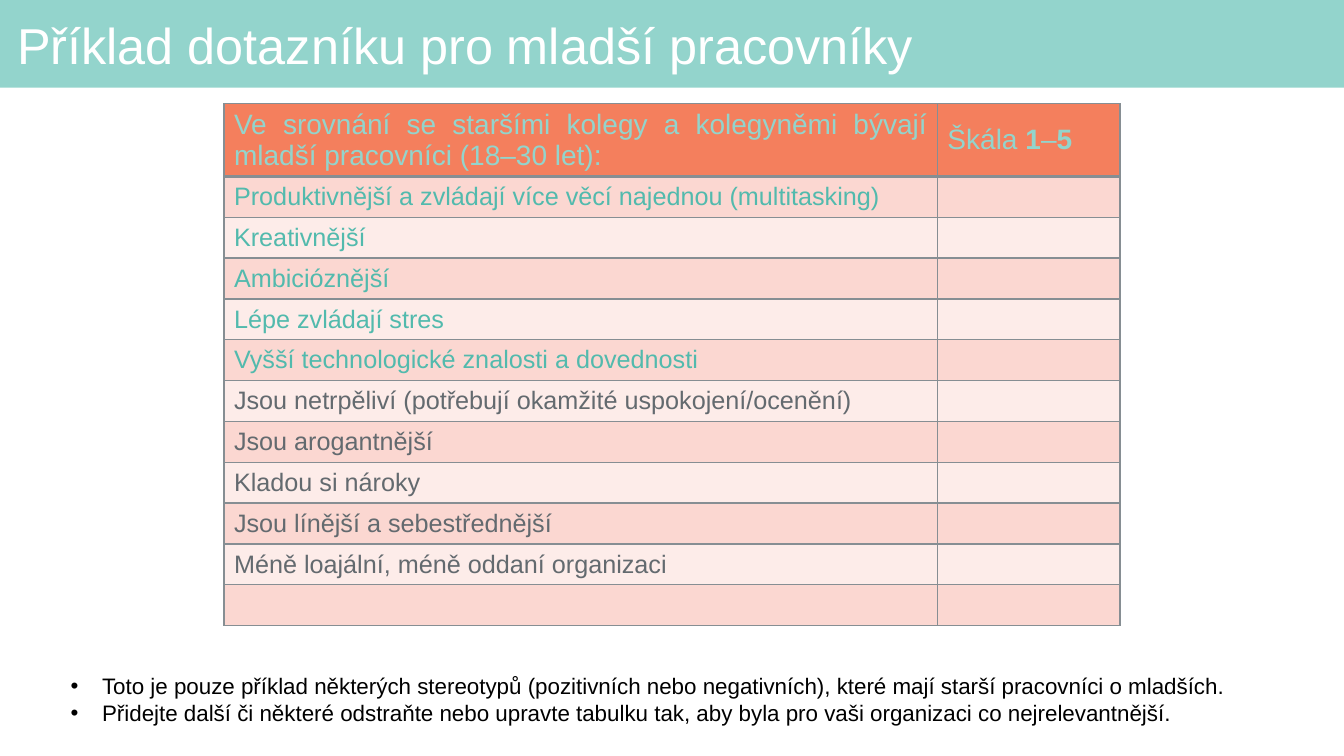
from lxml import etree
from pptx import Presentation
from pptx.dml.color import RGBColor
from pptx.enum.shapes import MSO_SHAPE
from pptx.enum.text import MSO_ANCHOR, PP_ALIGN
from pptx.oxml.ns import qn
from pptx.util import Pt

RECT = MSO_SHAPE.RECTANGLE
TOP, MIDDLE = MSO_ANCHOR.TOP, MSO_ANCHOR.MIDDLE
LEFT, JUSTIFY = PP_ALIGN.LEFT, PP_ALIGN.JUSTIFY

MINT = RGBColor(0x93, 0xD4, 0xCC)
TEAL = RGBColor(0x52, 0xBA, 0xAD)
CORAL = RGBColor(0xF4, 0x7F, 0x5D)
ROSE = RGBColor(0xFB, 0xD7, 0xD1)
BLUSH = RGBColor(0xFD, 0xEC, 0xE9)
SLATE = RGBColor(0x63, 0x6A, 0x6F)
STEEL = RGBColor(0x86, 0x8E, 0x93)
WHITE = RGBColor(0xFF, 0xFF, 0xFF)
BLACK = RGBColor(0x00, 0x00, 0x00)

FONT = "Arial"
TITLE = "Příklad dotazníku pro mladší pracovníky"
HEAD = "Ve srovnání se staršími kolegy a kolegyněmi bývají mladší pracovníci (18–30 let):"
SCALE = [("Škála ", False), ("1", True), ("–", False), ("5", True)]
PROS = [
    "Produktivnější a zvládají více věcí najednou (multitasking)",
    "Kreativnější",
    "Ambicióznější",
    "Lépe zvládají stres",
    "Vyšší technologické znalosti a dovednosti",
]
CONS = [
    "Jsou netrpěliví (potřebují okamžité uspokojení/ocenění)",
    "Jsou arogantnější",
    "Kladou si nároky",
    "Jsou línější a sebestřednější",
    "Méně loajální, méně oddaní organizaci",
]
NOTES = [
    "Toto je pouze příklad některých stereotypů (pozitivních nebo negativních), "
    "které mají starší pracovníci o mladších.",
    "Přidejte další či některé odstraňte nebo upravte tabulku tak, "
    "aby byla pro vaši organizaci co nejrelevantnější.",
]


def style(para, size, color, align=LEFT):
    """Set the font and alignment of a paragraph."""
    para.alignment = align
    font = para.font
    font.name, font.size = FONT, Pt(size)
    font.color.rgb = color


def place(shape, left, top, width, height):
    """Move a shape to a box given in points."""
    shape.left, shape.top = Pt(left), Pt(top)
    shape.width, shape.height = Pt(width), Pt(height)


def pad(frame, side, edge):
    """Set the insets of a wrapping text frame."""
    frame.word_wrap = True
    frame.margin_left = frame.margin_right = Pt(side)
    frame.margin_top = frame.margin_bottom = Pt(edge)


def border(cell, base):
    """Draw the four borders of a cell, the lower one with its own width."""
    props = cell._tc.get_or_add_tcPr()
    for side, width in (("L", 1), ("R", 1), ("T", 1), ("B", base)):
        line = etree.SubElement(props, qn(f"a:ln{side}"), w=str(Pt(width)))
        fill = etree.SubElement(line, qn("a:solidFill"))
        etree.SubElement(fill, qn("a:srgbClr"), val=str(STEEL))


def add_title(slide, left, top, width, height):
    """Put the title on a coloured band."""
    band = slide.shapes.add_shape(RECT, Pt(left), Pt(top), Pt(width), Pt(height))
    band.shadow.inherit = False
    band.fill.solid()
    band.fill.fore_color.rgb = MINT
    band.line.fill.background()
    title = slide.shapes.title
    title.element.addprevious(band.element)
    place(title, left + 7.9, top + 6.5, width - 20, height - 6.5)
    frame = title.text_frame
    pad(frame, 4.3, 4.3)
    frame.vertical_anchor = MIDDLE
    frame.text = TITLE
    para = frame.paragraphs[0]
    para.line_spacing = 0.9
    style(para, 36, WHITE)


def add_survey(slide, left, top, width, height):
    """Build the table of statements with a column for the rating."""
    items = PROS + CONS + [""]
    first, scale = 52, 130.4
    step = (height - first) / len(items)
    table = slide.shapes.add_table(
        len(items) + 1, 2, Pt(left), Pt(top), Pt(width), Pt(height)
    ).table
    table.first_row = table.horz_banding = False
    table.columns[0].width, table.columns[1].width = Pt(width - scale), Pt(scale)
    for num, text in enumerate([HEAD] + items):
        table.rows[num].height = Pt(step if num else first)
        shade = (ROSE if num % 2 else BLUSH) if num else CORAL
        ink = (TEAL if num <= len(PROS) else SLATE) if num else MINT
        for col, cell in enumerate(table.rows[num].cells):
            border(cell, 1 if num else 3)
            cell.fill.solid()
            cell.fill.fore_color.rgb = shade
            cell.vertical_anchor = MIDDLE
            para = cell.text_frame.paragraphs[0]
            if col == 0 and text:
                para.text = text
            style(para, 18 if num else 20, ink, LEFT if col else JUSTIFY)
    para = table.cell(0, 1).text_frame.paragraphs[0]
    for text, bold in SCALE:
        run = para.add_run()
        run.text, run.font.bold = text, bold


def add_notes(slide, left, top, width, height):
    """Fill the body placeholder with the bulleted remarks."""
    body = slide.placeholders[1]
    place(body, left, top, width, height)
    frame = body.text_frame
    pad(frame, 7.2, 3.6)
    frame.vertical_anchor = TOP
    frame.text = "\n".join(NOTES)
    for para in frame.paragraphs:
        para.space_before = Pt(0)
        style(para, 16, BLACK)
        props = para._p.get_or_add_pPr()
        props.set("marL", str(Pt(22.5)))
        props.set("indent", str(-Pt(22.5)))


def main():
    """Build and save the slide."""
    deck = Presentation()
    deck.slide_width, deck.slide_height = Pt(960), Pt(540)
    slide = deck.slides.add_slide(deck.slide_layouts[1])
    add_title(slide, 0, 0, 960, 62.6)
    add_survey(slide, 160, 74, 640, 373)
    add_notes(slide, 43.2, 476.6, 900.7, 46)
    deck.save("out.pptx")


if __name__ == "__main__":
    main()
